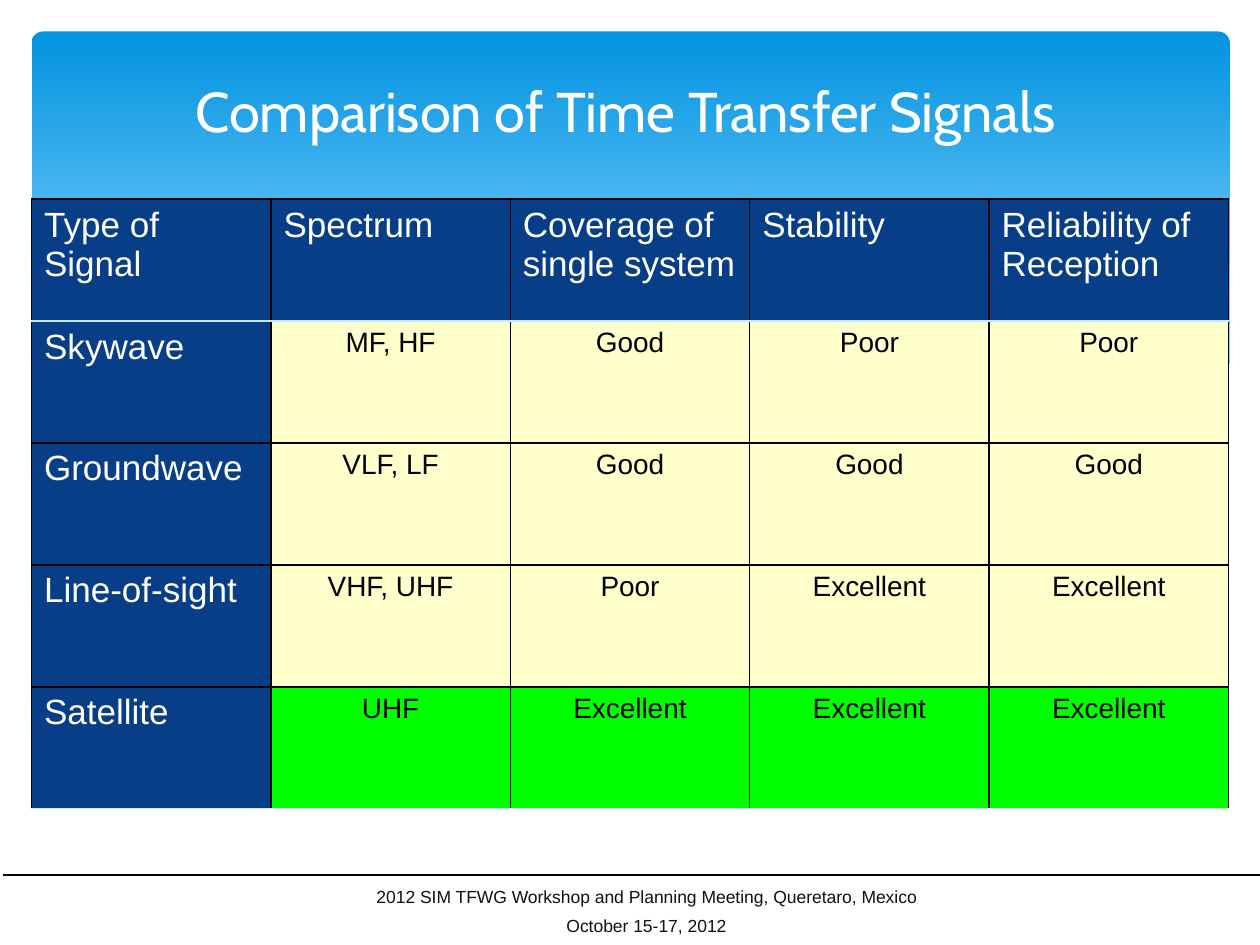
from pptx import Presentation
from pptx import util as u
from pptx.dml.color import RGBColor
from pptx.enum import shapes, text
from pptx.oxml import parse_xml
from pptx.oxml.ns import nsdecls

WHITE = RGBColor(0xFF, 0xFF, 0xFF)
BLACK = RGBColor(0, 0, 0)
INK = RGBColor(0x11, 0x11, 0x11)
NAVY = RGBColor(0x07, 0x3E, 0x87)
CREAM = RGBColor(0xFF, 0xFF, 0xCC)
GREEN = RGBColor(0, 0xFF, 0)
PALE = RGBColor(0xC6, 0xE7, 0xFC)
BLUE = RGBColor(0x02, 0x93, 0xE0)
SKY = RGBColor(0x83, 0xD3, 0xFE)

ROWS = [
    ["Type of Signal", "Spectrum", "Coverage of single system", "Stability",
     "Reliability of Reception"],
    ["Skywave", "MF, HF", "Good", "Poor", "Poor"],
    ["Groundwave", "VLF, LF", "Good", "Good", "Good"],
    ["Line-of-sight", "VHF, UHF", "Poor", "Excellent", "Excellent"],
    ["Satellite", "UHF", "Excellent", "Excellent", "Excellent"],
]


class Board:
    def __init__(self, slide, font="Arial"):
        self.slide = slide
        self.font = font

    def style(self, frame, size, color, align, font=None, gap=0):
        for i, para in enumerate(frame.paragraphs):
            para.alignment = align
            if i and gap:
                para.space_before = u.Pt(gap)
            for run in para.runs:
                run.font.name = font or self.font
                run.font.size = u.Pt(size)
                run.font.color.rgb = color

    def panel(self, box, top, low):
        shape = self.slide.shapes.add_shape(
            shapes.MSO_SHAPE.ROUNDED_RECTANGLE, *map(u.Inches, box))
        shape.adjustments[0] = 0.034
        shape.shadow.inherit = False
        shape.line.fill.background()
        shape.fill.gradient()
        shape.fill.gradient_angle = 270
        for stop, color, pos in zip(shape.fill.gradient_stops,
                                    (top, low), (0, 0.9)):
            stop.color.rgb = color
            stop.position = pos

    def label(self, box, words, size, color, font=None, gap=0,
              anchor=text.MSO_ANCHOR.TOP):
        frame = self.slide.shapes.add_textbox(*map(u.Inches, box)).text_frame
        frame.word_wrap = True
        frame.vertical_anchor = anchor
        frame.text = words
        self.style(frame, size, color, text.PP_ALIGN.CENTER, font, gap)

    def rule(self, left, right, y, color, shade):
        line = self.slide.shapes.add_connector(
            shapes.MSO_CONNECTOR.STRAIGHT, u.Inches(left), u.Inches(y),
            u.Inches(right), u.Inches(y))
        line.line.color.rgb = color
        line.line.width = u.Pt(1)
        # Hard shadow, down and to the right
        line._element.spPr.append(parse_xml(
            f'<a:effectLst {nsdecls("a")}><a:outerShdw dist="{u.Pt(2.8)}" '
            f'dir="2700000" algn="ctr" rotWithShape="0">'
            f'<a:srgbClr val="{shade}"/></a:outerShdw></a:effectLst>'))

    def edges(self, cell, top, low):
        props = cell._tc.get_or_add_tcPr()
        for side, color in zip("LRTB", (BLACK, BLACK, top, low)):
            props.append(parse_xml(
                f'<a:ln{side} {nsdecls("a")} w="12700"><a:solidFill>'
                f'<a:srgbClr val="{color}"/></a:solidFill></a:ln{side}>'))

    def table(self, box, rows):
        last = len(rows) - 1
        grid = self.slide.shapes.add_table(
            len(rows), len(rows[0]), *map(u.Inches, box)).table
        for r, row in enumerate(rows):
            for c, words in enumerate(row):
                cell = grid.cell(r, c)
                head = r == 0 or c == 0
                self.edges(cell, PALE if r == 1 else BLACK,
                           PALE if r in (0, last) else BLACK)
                cell.fill.solid()
                cell.fill.fore_color.rgb = (
                    NAVY if head else GREEN if r == last else CREAM)
                cell.text_frame.text = words
                if head:
                    self.style(cell.text_frame, 20, WHITE, text.PP_ALIGN.LEFT)
                else:
                    self.style(cell.text_frame, 16, BLACK,
                               text.PP_ALIGN.CENTER)


def main():
    deck = Presentation()
    deck.slide_width = u.Inches(10)
    deck.slide_height = u.Inches(7.5)
    board = Board(deck.slides.add_slide(deck.slide_layouts[6]))

    # Title band
    board.panel((0.25, 0.25, 9.51, 2.7), BLUE, SKY)
    board.label((0.75, 0.5, 8.44, 0.75), "Comparison of Time Transfer Signals",
                32, WHITE, "Cabin", anchor=text.MSO_ANCHOR.MIDDLE)

    # Signal comparison
    board.table((0.25, 1.58, 9.5, 4.84), ROWS)

    # Footer
    board.rule(0, 10, 6.92, WHITE, BLACK)
    board.label((2.59, 6.98, 5.08, 0.52),
                "2012 SIM TFWG Workshop and Planning Meeting, "
                "Queretaro, Mexico\nOctober 15-17, 2012", 10, INK, gap=5)

    deck.save("out.pptx")


if __name__ == "__main__":
    main()
